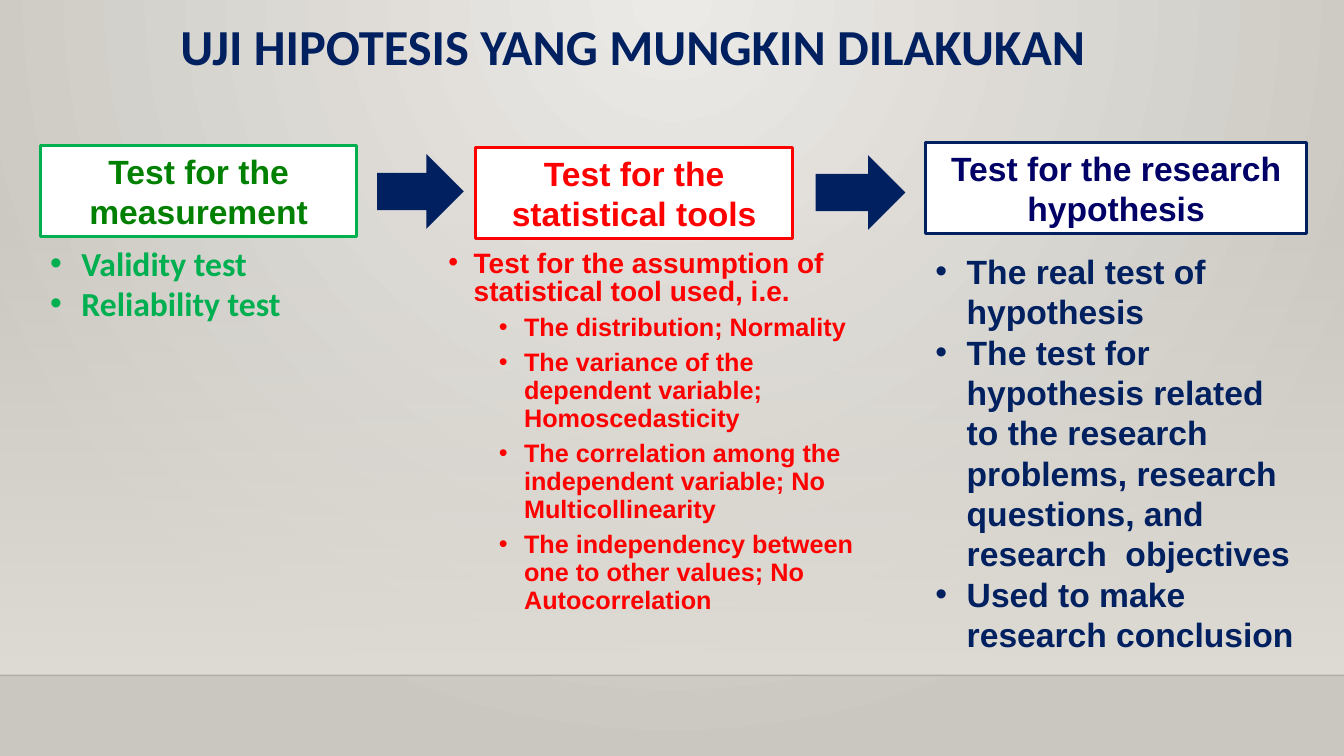
from pptx import Presentation
from pptx.dml.color import RGBColor
from pptx.enum.shapes import MSO_CONNECTOR, MSO_SHAPE
from pptx.enum.text import MSO_ANCHOR, PP_ALIGN
from pptx.oxml import parse_xml
from pptx.oxml.ns import nsdecls
from pptx.util import Inches, Pt

RECTANGLE = MSO_SHAPE.RECTANGLE
RIGHT_ARROW = MSO_SHAPE.RIGHT_ARROW
STRAIGHT = MSO_CONNECTOR.STRAIGHT
TOP = MSO_ANCHOR.TOP
MIDDLE = MSO_ANCHOR.MIDDLE
CENTER = PP_ALIGN.CENTER

NAVY = RGBColor(0x00, 0x20, 0x60)
DEEP_BLUE = RGBColor(0x00, 0x00, 0x66)
GREEN = RGBColor(0x00, 0xB0, 0x50)
DARK_GREEN = RGBColor(0x00, 0x80, 0x00)
RED = RGBColor(0xFF, 0x00, 0x00)
WHITE = RGBColor(0xFF, 0xFF, 0xFF)
NEAR_BLACK = RGBColor(0x00, 0x00, 0x01)
BACKDROP_LIGHT = RGBColor(0xEC, 0xEA, 0xE7)
BACKDROP_DARK = RGBColor(0xCA, 0xC7, 0xC1)
BAND = RGBColor(0xDF, 0xDB, 0xD5)

SLIDE_WIDTH, SLIDE_HEIGHT = 13.33, 7.5
FLOOR = 6.7

# Header box, header colours, list box, list colour, list font, list items
STAGES = [
    ("Test for the measurement", (0.4, 1.44, 3.14, 0.91), GREEN, DARK_GREEN),
    ("Test for the statistical tools", (4.72, 1.46, 3.14, 0.91), RED, RED),
    ("Test for the research hypothesis", (9.18, 1.41, 3.78, 0.91), NAVY, DEEP_BLUE),
]
ARROWS = [(3.74, 1.53, 0.86, 0.74), (8.09, 1.54, 0.89, 0.74)]
MEASUREMENT_TESTS = ["Validity test", "Reliability test"]
ASSUMPTION = "Test for the assumption of statistical tool used, i.e."
ASSUMPTION_TESTS = [
    "The distribution; Normality",
    "The variance of the dependent variable; Homoscedasticity",
    "The correlation among the independent variable; No Multicollinearity",
    "The independency between one to other values; No Autocorrelation",
]
HYPOTHESIS_TESTS = [
    "The real test of hypothesis",
    "The test for hypothesis related to the research problems, "
    "research questions, and research  objectives",
    "Used to make research conclusion",
]


def inches(box):
    return [Inches(length) for length in box]


def format_runs(paragraph, font_name, size, color):
    for run in paragraph.runs:
        run.font.name = font_name
        run.font.size = Pt(size)
        run.font.bold = True
        run.font.color.rgb = color


def set_gradient(element, fill, stops, shading):
    """Fill with (position, colour, opacity) stops, positions in percent."""
    fill.solid()
    stop_xml = "".join(
        f'<a:gs pos="{position * 1000}"><a:srgbClr val="{color}">'
        f'<a:alpha val="{opacity * 1000}"/></a:srgbClr></a:gs>'
        for position, color, opacity in stops
    )
    gradient = parse_xml(
        f'<a:gradFill {nsdecls("a")} rotWithShape="1">'
        f"<a:gsLst>{stop_xml}</a:gsLst>{shading}</a:gradFill>"
    )
    solid = element.xpath(".//a:solidFill")[0]
    solid.getparent().replace(solid, gradient)


def add_plain_shape(slide, kind, box, color):
    shape = slide.shapes.add_shape(kind, *inches(box))
    shape.shadow.inherit = False
    shape.fill.solid()
    shape.fill.fore_color.rgb = color
    shape.line.fill.background()
    return shape


def add_backdrop(slide):
    set_gradient(
        slide.element, slide.background.fill,
        [(0, BACKDROP_LIGHT, 100), (100, BACKDROP_DARK, 100)],
        '<a:path path="circle"><a:fillToRect l="43000" r="43000" b="100000"/></a:path>',
    )
    band = add_plain_shape(slide, RECTANGLE, (0, 2.21, SLIDE_WIDTH, FLOOR - 2.21), BAND)
    set_gradient(
        band.element, band.fill, [(0, BAND, 0), (100, BAND, 100)],
        '<a:lin ang="5400000" scaled="0"/>',
    )
    floor_line = slide.shapes.add_connector(
        STRAIGHT, *inches((0, FLOOR, SLIDE_WIDTH, FLOOR)))
    floor_line.line.width = Pt(1)
    floor_line.line.color.rgb = NEAR_BLACK
    line_color = floor_line.element.xpath(".//a:ln//a:srgbClr")[0]
    line_color.append(parse_xml(f'<a:alpha {nsdecls("a")} val="20000"/>'))
    floor_line.element.spPr.append(parse_xml(f'<a:effectLst {nsdecls("a")}/>'))


def place_title(slide, text, box):
    title = slide.shapes.title
    title.left, title.top, title.width, title.height = inches(box)
    text_frame = title.text_frame
    text_frame.text = text
    text_frame.vertical_anchor = TOP
    paragraph = text_frame.paragraphs[0]
    paragraph.alignment = CENTER
    paragraph.line_spacing = 0.9
    format_runs(paragraph, "Calibri", 36, NAVY)


def add_header(slide, text, box, line_color, text_color):
    header = add_plain_shape(slide, RECTANGLE, box, WHITE)
    header.line.color.rgb = line_color
    header.line.width = Pt(2.25)
    text_frame = header.text_frame
    text_frame.word_wrap = True
    text_frame.vertical_anchor = MIDDLE
    text_frame.text = text
    paragraph = text_frame.paragraphs[0]
    paragraph.alignment = CENTER
    format_runs(paragraph, "Arial", 24, text_color)


def add_bullet(paragraph, margin, hanging):
    properties = paragraph._p.get_or_add_pPr()
    properties.set("marL", str(Inches(margin)))
    properties.set("indent", str(-Inches(hanging)))
    properties.append(parse_xml(f'<a:buFont {nsdecls("a")} typeface="Arial"/>'))
    properties.append(parse_xml(f'<a:buChar {nsdecls("a")} char="•"/>'))


def add_list(slide, items, box):
    """Add an empty-styled list and return its paragraphs."""
    text_frame = slide.shapes.add_textbox(*inches(box)).text_frame
    text_frame.word_wrap = True
    text_frame.text = "\n".join(items)
    return text_frame.paragraphs


def add_simple_list(slide, items, box, font_name, color):
    for paragraph in add_list(slide, items, box):
        add_bullet(paragraph, 0.31, 0.31)
        format_runs(paragraph, font_name, 24, color)


def add_assumption_list(slide, box):
    paragraphs = add_list(slide, [ASSUMPTION, *ASSUMPTION_TESTS], box)
    for index, paragraph in enumerate(paragraphs):
        is_detail = index > 0
        add_bullet(paragraph, 0.75 if is_detail else 0.25, 0.25)
        paragraph.line_spacing = Pt(20)
        if is_detail:
            paragraph.level = 1
            paragraph.space_before = Pt(5)
        format_runs(paragraph, "Arial", 18 if is_detail else 20, RED)


def main():
    presentation = Presentation()
    presentation.slide_width = Inches(SLIDE_WIDTH)
    presentation.slide_height = Inches(SLIDE_HEIGHT)
    slide = presentation.slides.add_slide(presentation.slide_layouts[5])
    add_backdrop(slide)
    place_title(slide, "UJI HIPOTESIS YANG MUNGKIN DILAKUKAN", (0.53, 0.17, 11.5, 1.12))
    for stage in STAGES:
        add_header(slide, *stage)
    for box in ARROWS:
        add_plain_shape(slide, RIGHT_ARROW, box, NAVY)
    add_simple_list(slide, MEASUREMENT_TESTS, (0.4, 2.36, 3.14, 0.91), "Calibri", GREEN)
    add_assumption_list(slide, (4.35, 2.44, 4.24, 4.24))
    add_simple_list(slide, HYPOTHESIS_TESTS, (9.18, 2.44, 3.78, 4.14), "Arial", NAVY)
    presentation.save("out.pptx")


if __name__ == "__main__":
    main()
